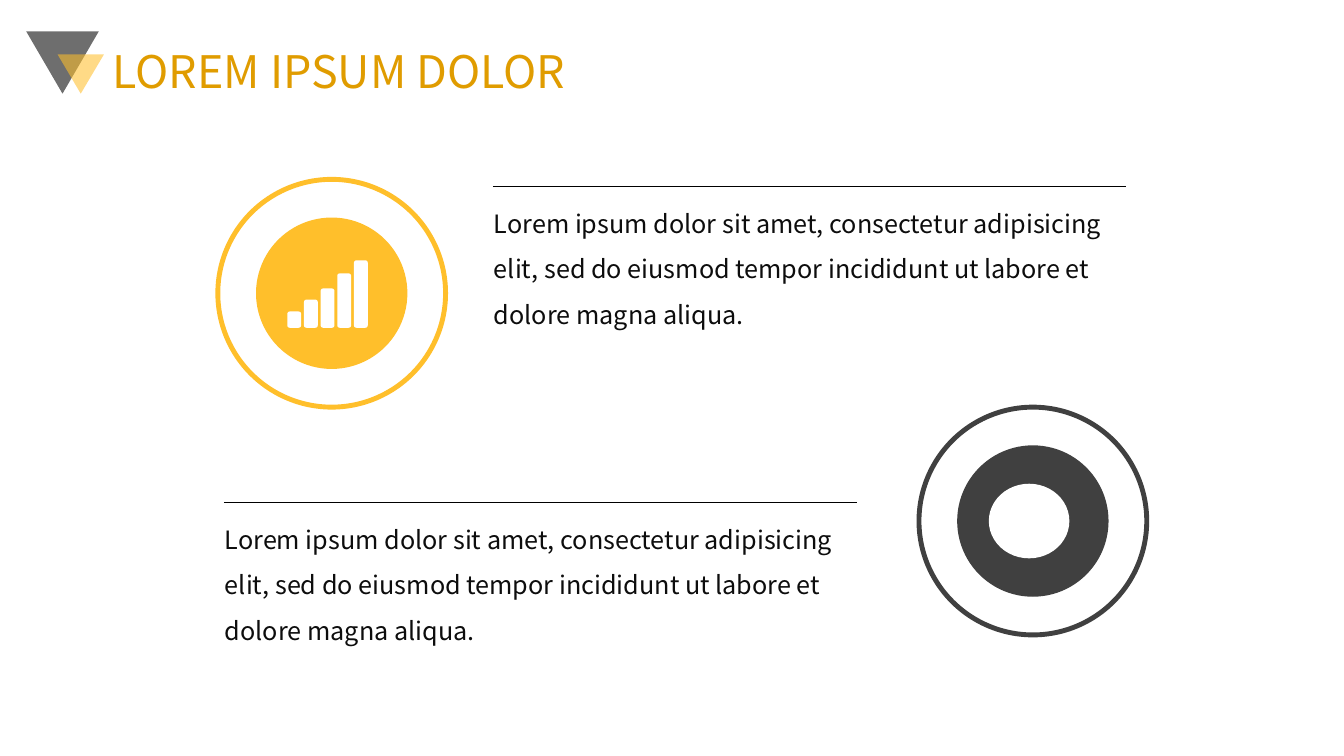
from lxml.etree import SubElement
from pptx import Presentation
from pptx.dml.color import RGBColor
from pptx.enum.shapes import MSO_CONNECTOR, MSO_SHAPE
from pptx.enum.text import MSO_ANCHOR
from pptx.oxml.ns import qn
from pptx.util import Cm, Pt

BLACK = RGBColor(0x00, 0x00, 0x00)
WHITE = RGBColor(0xFF, 0xFF, 0xFF)
CHARCOAL = RGBColor(0x40, 0x40, 0x40)
INK = RGBColor(0x0D, 0x0D, 0x0D)
YELLOW = RGBColor(0xFF, 0xBF, 0x2B)
GOLD = RGBColor(0xE0, 0x9C, 0x00)

BODY = ("Lorem ipsum dolor sit amet, consectetur adipisicing elit, sed do "
        "eiusmod tempor incididunt ut labore et dolore magna aliqua.")
RING_SIZE, DISC_SIZE = 5.74, 3.78
RULE_LENGTH = 15.95


class SlideBuilder:
    """Holds the font and the current slide, and adds elements in centimetres."""

    def __init__(self, slide, font_name):
        self.slide = slide
        self.font_name = font_name

    def shape(self, kind, left, top, width, height, fill=None, line=None,
              line_width=1, opacity=None, rotation=0, corner=None):
        shape = self.slide.shapes.add_shape(
            kind, Cm(left), Cm(top), Cm(width), Cm(height))
        shape.shadow.inherit = False
        shape.rotation = rotation
        if corner is not None:
            shape.adjustments[0] = corner
        if fill is None:
            shape.fill.background()
        else:
            shape.fill.solid()
            shape.fill.fore_color.rgb = fill
        if opacity is not None:
            color = shape.element.spPr.find(qn("a:solidFill"))[0]
            SubElement(color, qn("a:alpha"), val=str(opacity * 1000))
        if line is None:
            shape.line.fill.background()
        else:
            shape.line.color.rgb = line
            shape.line.width = Pt(line_width)

    def circle(self, center_x, center_y, size, **style):
        self.shape(MSO_SHAPE.OVAL, center_x - size / 2, center_y - size / 2,
                   size, size, **style)

    def badge(self, center_x, center_y, color):
        self.circle(center_x, center_y, RING_SIZE, line=color, line_width=3.5)
        self.circle(center_x, center_y, DISC_SIZE, fill=color, line=color)

    def rule(self, left, top, length):
        connector = self.slide.shapes.add_connector(
            MSO_CONNECTOR.STRAIGHT, Cm(left), Cm(top), Cm(left + length), Cm(top))
        connector.line.color.rgb = BLACK
        connector.line.width = Pt(0.5)
        SubElement(connector.element.spPr, qn("a:effectLst"))

    def text(self, text, left, top, width, height, size, color, spacing,
             anchor=MSO_ANCHOR.TOP):
        box = self.slide.shapes.add_textbox(
            Cm(left), Cm(top), Cm(width), Cm(height))
        frame = box.text_frame
        frame.word_wrap = True
        frame.vertical_anchor = anchor
        paragraph = frame.paragraphs[0]
        paragraph.line_spacing = spacing
        run = paragraph.add_run()
        run.text = text
        font_format = {"name": self.font_name, "size": Pt(size)}
        for attribute, value in font_format.items():
            setattr(run.font, attribute, value)
        run.font.color.rgb = color

    def ruled_text(self, left, top):
        self.rule(left, top, RULE_LENGTH)
        self.text(BODY, left - 0.22, top + 0.04, 16.69, 3.76, 18, INK, 1.5)


def main():
    presentation = Presentation()
    presentation.slide_width = Cm(33.87)
    presentation.slide_height = Cm(19.05)
    slide = presentation.slides.add_slide(presentation.slide_layouts[6])
    builder = SlideBuilder(slide, "Noto Sans CJK JP")

    # Corner triangles, pointing down
    for left, top, width, height, color in (
            (0.66, 0.79, 1.83, 1.57, BLACK), (1.45, 1.37, 1.17, 0.99, YELLOW)):
        builder.shape(MSO_SHAPE.ISOSCELES_TRIANGLE, left, top, width, height,
                      fill=color, opacity=57, rotation=180)

    # Dark badge with a plain emblem
    builder.badge(26.03, 13.13, CHARCOAL)
    builder.shape(MSO_SHAPE.OVAL, 24.92, 12.19, 2.03, 1.88, fill=WHITE)

    # Yellow badge with rising bars
    builder.badge(8.36, 7.39, YELLOW)
    bars_left, bars_bottom, bar_step = 7.24, 8.26, 0.42
    for index, height in enumerate((0.41, 0.71, 0.99, 1.37, 1.7)):
        builder.shape(MSO_SHAPE.ROUNDED_RECTANGLE, bars_left + index * bar_step,
                      bars_bottom - height, 0.35, height, fill=WHITE, corner=0.18)

    # Text blocks under their rules
    builder.ruled_text(12.42, 4.7)
    builder.ruled_text(5.64, 12.67)

    # Title
    builder.text("LOREM IPSUM DOLOR", 2.59, 0.79, 29.21, 2.16, 32, GOLD, 0.9,
                 MSO_ANCHOR.MIDDLE)

    presentation.save("out.pptx")


if __name__ == "__main__":
    main()
